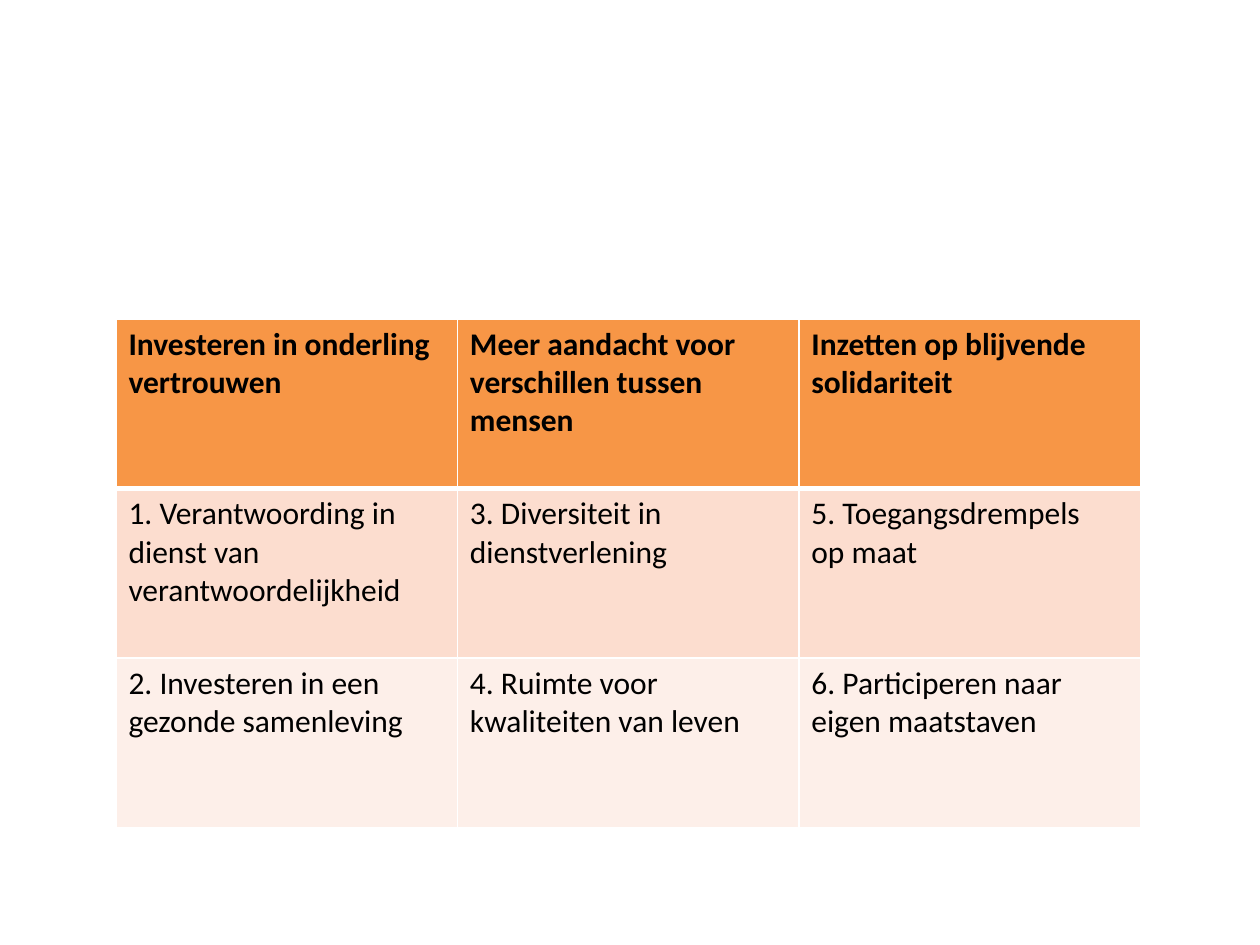
from lxml import etree
from pptx import Presentation
from pptx.dml.color import RGBColor
from pptx.oxml.ns import qn
from pptx.util import Inches, Pt

COLORS = {
    "header": "F79646",
    "band_dark": "FCDDCF",
    "band_light": "FDEFE9",
    "border": "FFFFFF",
    "text": "000000",
}
ROW_FILLS = ["header", "band_dark", "band_light"]
ROWS = [
    ["Investeren in onderling vertrouwen",
     "Meer aandacht voor verschillen tussen mensen",
     "Inzetten op blijvende solidariteit"],
    ["1. Verantwoording in dienst van\nverantwoordelijkheid",
     "3. Diversiteit in dienstverlening",
     "5. Toegangsdrempels\nop maat"],
    ["2. Investeren in een gezonde samenleving",
     "4. Ruimte voor kwaliteiten van leven",
     "6. Participeren naar eigen maatstaven"],
]


def add_border(cell, side, width):
    ln = etree.SubElement(cell._tc.get_or_add_tcPr(), qn(f"a:ln{side}"), w=str(Pt(width)))
    fill = etree.SubElement(ln, qn("a:solidFill"))
    etree.SubElement(fill, qn("a:srgbClr"), val=COLORS["border"])


# Blank slide
prs = Presentation()
prs.slide_width, prs.slide_height = Inches(10), Inches(7.5)
s = prs.slides.add_slide(prs.slide_layouts[6])

# Table with equal columns and rows
table = s.shapes.add_table(3, 3, Inches(0.92), Inches(2.53),
                           Inches(8.13), Inches(4.04)).table
for col in table.columns:
    col.width = Inches(2.71)

# Cells: a thick rule separates the header from the body
for i, row in enumerate(ROWS):
    for j, words in enumerate(row):
        cell = table.cell(i, j)
        for side in "LRTB":
            under_header = (i, side) in [(0, "B"), (1, "T")]
            add_border(cell, side, 3 if under_header else 1)
        cell.fill.solid()
        cell.fill.fore_color.rgb = RGBColor.from_string(COLORS[ROW_FILLS[i]])
        cell.text_frame.text = words
        for p in cell.text_frame.paragraphs:
            for r in p.runs:
                r.font.name = "Calibri"
                r.font.size = Pt(18)
                r.font.bold = i == 0
                r.font.color.rgb = RGBColor.from_string(COLORS["text"])

prs.save("out.pptx")
